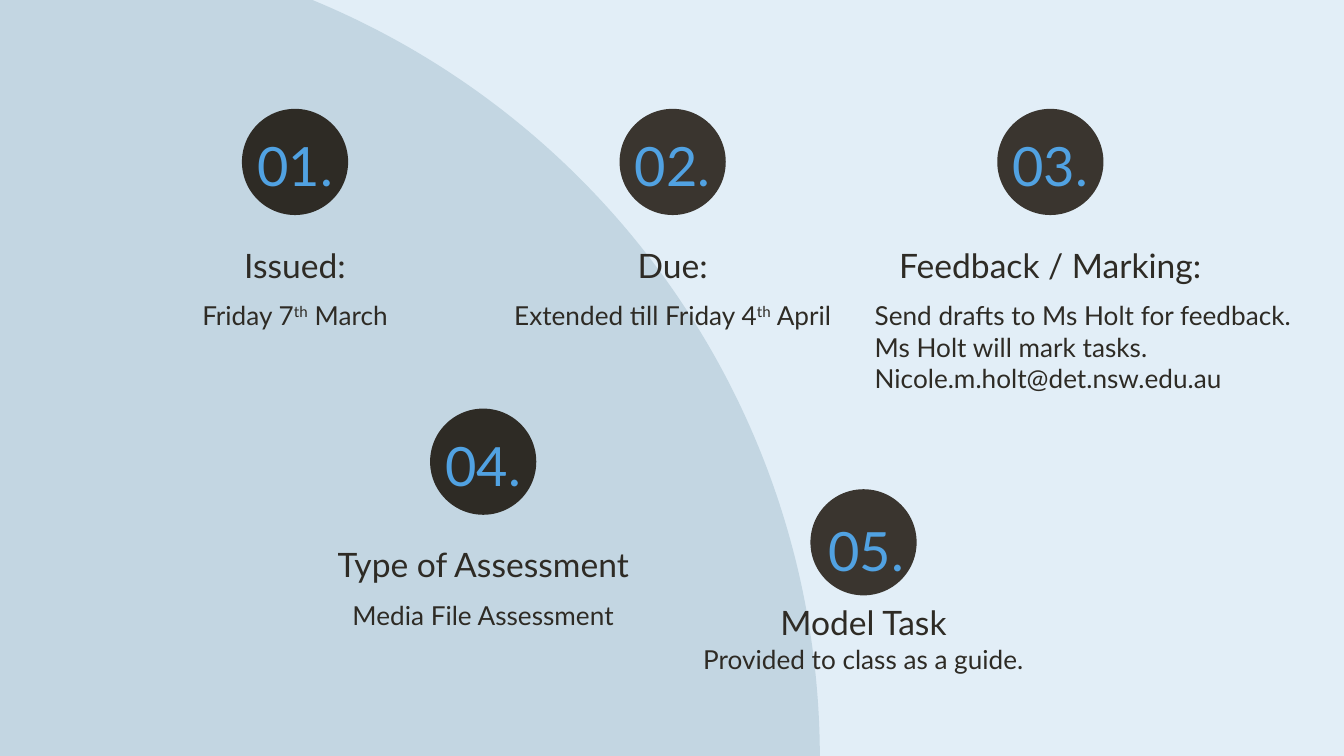
from dataclasses import dataclass

from pptx import Presentation
from pptx.dml.color import RGBColor
from pptx.enum.shapes import MSO_SHAPE
from pptx.enum.text import MSO_ANCHOR, PP_ALIGN
from pptx.shapes.autoshape import Shape
from pptx.slide import Slide
from pptx.util import Inches, Pt


@dataclass(frozen=True)
class Theme:
    font: str = "Lato"
    background: str = "E2EEF7"
    arc: str = "C3D6E2"
    ink: str = "2E2B25"
    light_ink: str = "3A352F"
    accent: str = "51A2E2"
    number_size: int = 29
    heading_size: int = 18
    body_size: int = 14


@dataclass(frozen=True)
class Frame:
    left: float
    top: float
    width: float
    height: float


@dataclass(frozen=True)
class TextStyle:
    size: int
    color: str
    anchor: MSO_ANCHOR
    align: PP_ALIGN = PP_ALIGN.CENTER
    top_inset: float = 0.1


@dataclass(frozen=True)
class Step:
    number: str
    heading: str
    lines: tuple[str, ...]
    left: float
    top: float
    disc_color: str
    number_left: float = 0
    number_top: float = 0.08
    heading_top: float = 0.5
    body_top: float = 1.32
    body_width: float = 2.81
    body_height: float = 0.68
    body_align: PP_ALIGN = PP_ALIGN.CENTER


THEME = Theme()
COLUMN = 2.81
DISC = 0.79
STEPS = (
    Step("01.", "Issued:", ("Friday 7^th^ March",), 0.79, 0.81, THEME.ink),
    Step("02.", "Due:", ("Extended till Friday 4^th^ April",), 3.6, 0.81, THEME.light_ink),
    Step(
        "03.",
        "Feedback / Marking:",
        (
            "Send drafts to Ms Holt for feedback.",
            "Ms Holt will mark tasks.",
            "Nicole.m.holt@det.nsw.edu.au",
        ),
        6.41,
        0.81,
        THEME.light_ink,
        body_width=3.34,
        body_height=1.15,
        body_align=PP_ALIGN.LEFT,
    ),
    Step("04.", "Type of Assessment", ("Media File Assessment",), 2.19, 3.04, THEME.ink),
    Step(
        "05.",
        "Model Task",
        ("Provided to class as a guide.",),
        5.02,
        3.64,
        THEME.light_ink,
        number_left=0.02,
        number_top=0.11,
        heading_top=0.33,
        body_top=1.05,
    ),
)


def add_filled_shape(page: Slide, kind: MSO_SHAPE, frame: Frame, color: str) -> Shape:
    """Add a flat preset shape without outline or shadow."""
    shape = page.shapes.add_shape(
        kind, Inches(frame.left), Inches(frame.top), Inches(frame.width), Inches(frame.height)
    )
    shape.shadow.inherit = False
    shape.fill.solid()
    shape.fill.fore_color.rgb = RGBColor.from_string(color)
    shape.line.fill.background()
    return shape


def add_text(page: Slide, frame: Frame, lines: tuple[str, ...], style: TextStyle) -> None:
    """Add a text box with one paragraph per line, raising text between carets."""
    box = page.shapes.add_textbox(
        Inches(frame.left), Inches(frame.top), Inches(frame.width), Inches(frame.height)
    )
    text_frame = box.text_frame
    text_frame.word_wrap = True
    text_frame.vertical_anchor = style.anchor
    text_frame.margin_left = text_frame.margin_right = text_frame.margin_bottom = Inches(0.1)
    text_frame.margin_top = Inches(style.top_inset)
    for index, line in enumerate(lines):
        para = text_frame.add_paragraph() if index else text_frame.paragraphs[0]
        para.alignment = style.align
        para.font.name = THEME.font
        para.font.size = Pt(style.size)
        para.font.color.rgb = RGBColor.from_string(style.color)
        for position, text in enumerate(line.split("^")):
            span = para.add_run()
            span.text = text
            if position % 2:
                span._r.get_or_add_rPr().set("baseline", "30000")


def add_disc(page: Slide, step: Step) -> None:
    """Add the disc centred over the column of a step."""
    left = step.left + (COLUMN - DISC) / 2
    add_filled_shape(page, MSO_SHAPE.OVAL, Frame(left, step.top, DISC, DISC), step.disc_color)


def add_step_text(page: Slide, step: Step) -> None:
    """Add the heading, body and number of a step."""
    add_text(
        page,
        Frame(step.left, step.top + step.heading_top, COLUMN, 0.91),
        (step.heading,),
        TextStyle(THEME.heading_size, THEME.ink, MSO_ANCHOR.BOTTOM),
    )
    add_text(
        page,
        Frame(step.left, step.top + step.body_top, step.body_width, step.body_height),
        step.lines,
        TextStyle(THEME.body_size, THEME.ink, MSO_ANCHOR.TOP, step.body_align),
    )
    add_text(
        page,
        Frame(step.left + step.number_left, step.top + step.number_top, COLUMN, 0.63),
        (step.number,),
        TextStyle(THEME.number_size, THEME.accent, MSO_ANCHOR.MIDDLE, top_inset=0.15),
    )


def main() -> None:
    """Build the assessment overview slide and save the deck."""
    deck = Presentation()
    deck.slide_width = Inches(10)
    deck.slide_height = Inches(10 * 9 / 16)
    page = deck.slides.add_slide(deck.slide_layouts[6])
    page.background.fill.solid()
    page.background.fill.fore_color.rgb = RGBColor.from_string(THEME.background)

    arc = add_filled_shape(page, MSO_SHAPE.PIE, Frame(-6.1, -0.46, 12.2, 12.2), THEME.arc)
    arc.adjustments[0], arc.adjustments[1] = 108, 162
    arc.rotation = 90

    for step in STEPS:
        add_disc(page, step)
    for step in STEPS:
        add_step_text(page, step)
    deck.save("out.pptx")


if __name__ == "__main__":
    main()
